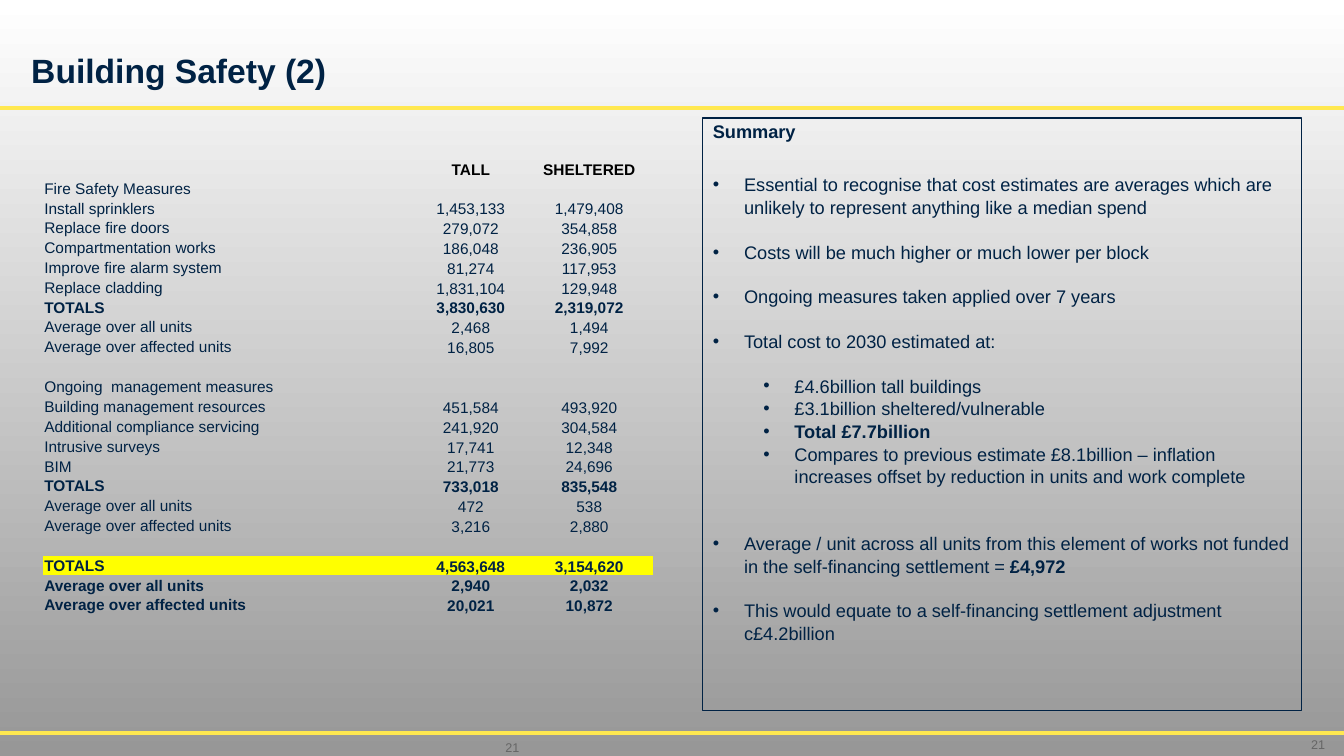
from lxml import etree
from pptx import Presentation
from pptx.dml.color import RGBColor
from pptx.enum.shapes import MSO_CONNECTOR
from pptx.enum.text import MSO_ANCHOR, MSO_AUTO_SIZE, PP_ALIGN
from pptx.oxml.ns import qn
from pptx.util import Inches, Pt

NAVY = RGBColor(0x00, 0x22, 0x44)
BLACK = RGBColor(0x00, 0x00, 0x00)
WHITE = RGBColor(0xFF, 0xFF, 0xFF)
GREY = RGBColor(0x66, 0x66, 0x66)
BACK_GREY = RGBColor(0x97, 0x97, 0x97)
RULE_YELLOW = RGBColor(0xFF, 0xE8, 0x50)
HIGHLIGHT = RGBColor(0xFF, 0xFF, 0x00)
NO_GRID_STYLE = "{2D5ABB26-0587-4C30-8999-92F81FD0307C}"
LINE_GAP = 15.6

COSTS = [
    ("", "TALL", "SHELTERED"),
    ("Fire Safety Measures", "", ""),
    ("Install sprinklers", "1,453,133", "1,479,408"),
    ("Replace fire doors", "279,072", "354,858"),
    ("Compartmentation works", "186,048", "236,905"),
    ("Improve fire alarm system", "81,274", "117,953"),
    ("Replace cladding", "1,831,104", "129,948"),
    ("TOTALS", "3,830,630", "2,319,072"),
    ("Average over all units", "2,468", "1,494"),
    ("Average over affected units", "16,805", "7,992"),
    ("", "", ""),
    ("Ongoing  management measures", "", ""),
    ("Building management resources", "451,584", "493,920"),
    ("Additional compliance servicing", "241,920", "304,584"),
    ("Intrusive surveys", "17,741", "12,348"),
    ("BIM", "21,773", "24,696"),
    ("TOTALS", "733,018", "835,548"),
    ("Average over all units", "472", "538"),
    ("Average over affected units", "3,216", "2,880"),
    ("", "", ""),
    ("TOTALS", "4,563,648", "3,154,620"),
    ("Average over all units", "2,940", "2,032"),
    ("Average over affected units", "20,021", "10,872"),
]
GRAND_TOTAL_ROW = 20

# level, space before in points, runs as (text, bold)
SUMMARY = [
    (0, LINE_GAP, [("Essential to recognise that cost estimates are averages which are "
                    "unlikely to represent anything like a median spend", False)]),
    (0, LINE_GAP, [("Costs will be much higher or much lower per block", False)]),
    (0, LINE_GAP, [("Ongoing measures taken applied over 7 years", False)]),
    (0, LINE_GAP, [("Total cost to 2030 estimated at:", False)]),
    (1, LINE_GAP, [("£4.6billion tall buildings", False)]),
    (1, 0, [("£3.1billion sheltered/vulnerable", False)]),
    (1, 0, [("Total £7.7billion", True)]),
    (1, 0, [("Compares to previous estimate £8.1billion – inflation increases "
             "offset by reduction in units and work complete", False)]),
    (0, 2 * LINE_GAP, [("Average / unit across all units from this element of works not "
                        "funded in the self-financing settlement = ", False),
                       ("£4,972", True)]),
    (0, LINE_GAP, [("This would equate to a self-financing settlement adjustment "
                    "c£4.2billion", False)]),
]


def add_run(p, text, size, color=NAVY, bold=False):
    r = p.add_run()
    r.text = text
    r.font.name = "Arial"
    r.font.size = Pt(size)
    r.font.bold = bold
    r.font.color.rgb = color


def place(s, left, top, width, height):
    s.left, s.top = Inches(left), Inches(top)
    s.width, s.height = Inches(width), Inches(height)


def set_background(slide):
    fill = slide.background.fill
    fill.gradient()
    fill.gradient_angle = 270
    for stop, position, color in zip(fill.gradient_stops, (0, 1), (WHITE, BACK_GREY)):
        stop.position = position
        stop.color.rgb = color


def add_rule(slide, top):
    s = slide.shapes.add_connector(
        MSO_CONNECTOR.STRAIGHT, 0, Inches(top), Inches(13.33), Inches(top))
    s.line.color.rgb = RULE_YELLOW
    s.line.width = Pt(3)
    etree.SubElement(s._element.spPr, qn("a:effectLst"))


def fill_title(s, text):
    place(s, 0.21, 0.45, 12.24, 0.5)
    tf = s.text_frame
    tf.auto_size = MSO_AUTO_SIZE.NONE
    tf.vertical_anchor = MSO_ANCHOR.BOTTOM
    p = tf.paragraphs[0]
    p.alignment = PP_ALIGN.LEFT
    p.line_spacing = 0.9
    add_run(p, text, 24, bold=True)


def set_bullet(p, level):
    pPr = p._p.get_or_add_pPr()
    pPr.set("marL", str(Inches(0.31 + 0.5 * level)))
    pPr.set("indent", str(Inches(-0.31)))
    etree.SubElement(pPr, qn("a:buFont"), typeface="Arial")
    etree.SubElement(pPr, qn("a:buChar"), char="•")


def fill_summary(s):
    place(s, 6.97, 1.17, 5.94, 5.88)
    s.line.color.rgb = NAVY
    s.line.width = Pt(1)
    tf = s.text_frame
    tf.word_wrap = True
    tf.auto_size = MSO_AUTO_SIZE.NONE
    tf.vertical_anchor = MSO_ANCHOR.TOP
    p = tf.paragraphs[0]
    pPr = p._p.get_or_add_pPr()
    pPr.set("marL", "0")
    pPr.set("indent", "0")
    etree.SubElement(pPr, qn("a:buNone"))
    p.space_before = Pt(0)
    p.space_after = Pt(6)
    p.line_spacing = 0.9
    add_run(p, "Summary", 13, bold=True)
    for level, gap, runs in SUMMARY:
        p = tf.add_paragraph()
        p.level = level
        set_bullet(p, level)
        p.alignment = PP_ALIGN.LEFT
        p.space_before = Pt(gap)
        p.space_after = Pt(0)
        p.line_spacing = 1.04
        for text, bold in runs:
            add_run(p, text, 13, bold=bold)


def fill_cell(cell, text, row, col):
    cell.margin_left = cell.margin_right = cell.margin_top = Inches(0.01)
    cell.margin_bottom = 0
    cell.vertical_anchor = MSO_ANCHOR.BOTTOM if col else MSO_ANCHOR.MIDDLE
    if row == GRAND_TOTAL_ROW:
        cell.fill.solid()
        cell.fill.fore_color.rgb = HIGHLIGHT
    else:
        cell.fill.background()
    p = cell.text_frame.paragraphs[0]
    p.alignment = PP_ALIGN.CENTER if col else PP_ALIGN.LEFT
    if text:
        bold = row == 0 or row >= GRAND_TOTAL_ROW or COSTS[row][0] == "TOTALS"
        add_run(p, text, 11, NAVY if row else BLACK, bold)
    else:
        etree.SubElement(p._p, qn("a:endParaRPr"), sz="1100")


def add_cost_table(slide):
    widths = (3.7, 1.08, 1.27)
    frame = slide.shapes.add_table(
        len(COSTS), len(widths), Inches(0.43), Inches(1.57), Inches(6.05), Inches(4.52))
    table = frame.table
    table.first_row = table.horz_banding = False
    table._tbl.tblPr.find(qn("a:tableStyleId")).text = NO_GRID_STYLE
    for column, width in zip(table.columns, widths):
        column.width = Inches(width)
    for i, values in enumerate(COSTS):
        table.rows[i].height = Inches(4.52 / len(COSTS))
        for j, text in enumerate(values):
            fill_cell(table.cell(i, j), text, i, j)


def add_page_number(slide, left, top):
    s = slide.shapes.add_textbox(Inches(left), Inches(top), Inches(0.51), Inches(0.23))
    tf = s.text_frame
    tf.word_wrap = True
    tf.vertical_anchor = MSO_ANCHOR.MIDDLE
    p = tf.paragraphs[0]
    p.alignment = PP_ALIGN.RIGHT
    add_run(p, "21", 9, GREY)


def main():
    prs = Presentation()
    prs.slide_width, prs.slide_height = Inches(13.33), Inches(7.5)
    slide = prs.slides.add_slide(prs.slide_layouts[1])
    set_background(slide)
    for top in (1.07, 7.27):
        add_rule(slide, top)
    fill_title(slide.shapes.title, "Building Safety (2)")
    fill_summary(slide.placeholders[1])
    add_cost_table(slide)
    add_page_number(slide, 12.73, 7.27)
    add_page_number(slide, 4.74, 7.3)
    prs.save("out.pptx")


if __name__ == "__main__":
    main()
